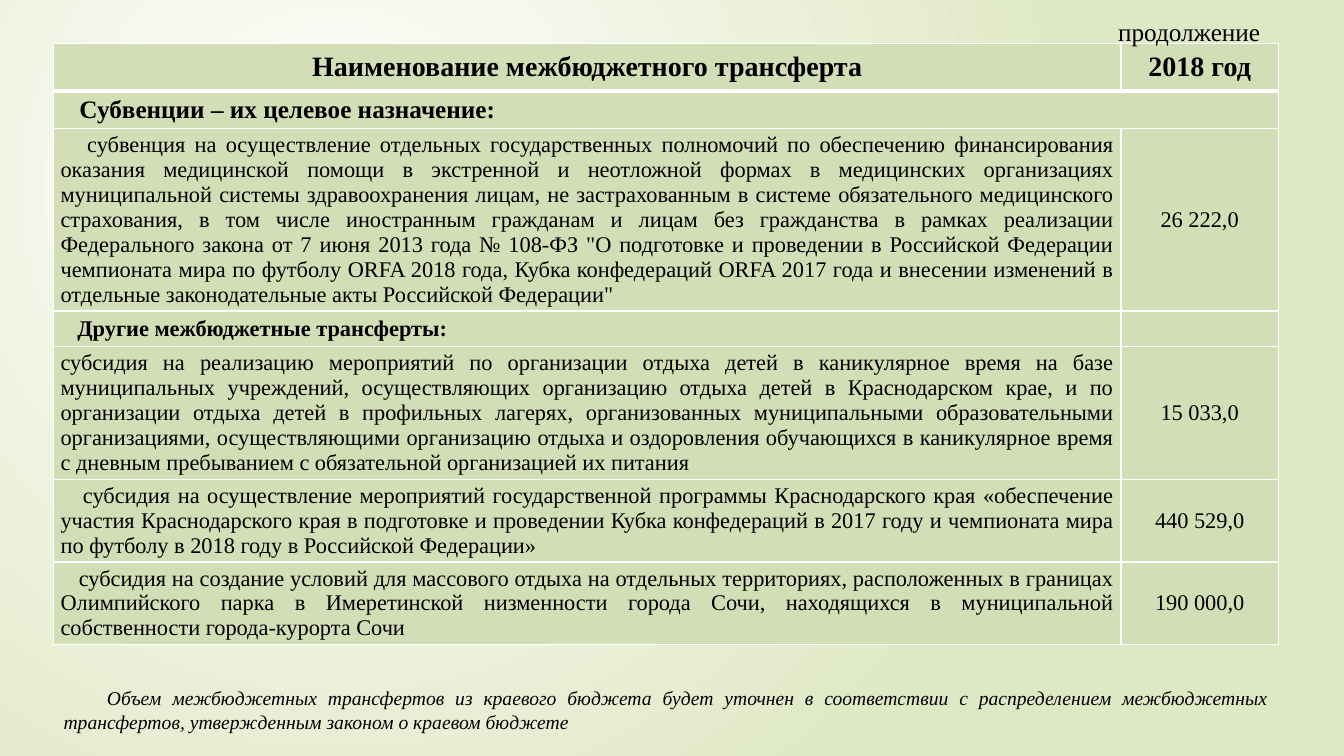
from dataclasses import dataclass

from lxml.etree import SubElement
from pptx import Presentation
from pptx.dml.color import RGBColor
from pptx.enum.text import MSO_ANCHOR, PP_ALIGN
from pptx.oxml import parse_xml
from pptx.oxml.ns import nsdecls, qn
from pptx.util import Pt


@dataclass(frozen=True)
class Theme:
    font: str = "Times New Roman"
    text: str = "000000"
    cell: str = "D4DEB6"
    border: str = "FFFFFF"
    glow: str = "FFFFFF"
    background: str = "DFE8C4"
    header_size: int = 20
    section_size: int = 18
    body_size: int = 16
    note_size: int = 14


THEME = Theme()
COLUMN_WIDTHS = (762.5, 112.3)
HEADER = ("Наименование межбюджетного трансферта", "2018 год")

# Name, value, row height, first-line indent, size, bold
ROWS = (
    ("Субвенции – их целевое назначение:", None, 27, 13.5, THEME.section_size, True),
    ("субвенция на осуществление отдельных государственных полномочий по обеспечению "
     "финансирования оказания медицинской помощи в экстренной и неотложной формах в "
     "медицинских организациях муниципальной системы здравоохранения лицам, не "
     "застрахованным в системе обязательного медицинского страхования, в том числе "
     "иностранным гражданам и лицам без гражданства в рамках реализации Федерального "
     "закона от 7 июня 2013 года № 108-ФЗ \"О подготовке и проведении в Российской "
     "Федерации чемпионата мира по футболу ORFA 2018 года, Кубка конфедераций ORFA 2017 "
     "года и внесении изменений в отдельные законодательные акты Российской Федерации\"",
     "26 222,0", 130, 19, THEME.body_size, False),
    ("Другие межбюджетные трансферты:", "", 24.5, 12, THEME.body_size, True),
    ("субсидия на реализацию мероприятий по организации отдыха детей в каникулярное "
     "время на базе муниципальных учреждений, осуществляющих организацию отдыха детей в "
     "Краснодарском крае, и по организации отдыха детей в профильных лагерях, "
     "организованных муниципальными образовательными организациями, осуществляющими "
     "организацию отдыха и оздоровления обучающихся в каникулярное время с дневным "
     "пребыванием с обязательной организацией их питания",
     "15 033,0", 94, 0, THEME.body_size, False),
    ("субсидия на осуществление мероприятий государственной программы Краснодарского "
     "края «обеспечение участия Краснодарского края в подготовке и проведении Кубка "
     "конфедераций в 2017 году и чемпионата мира по футболу в 2018 году в Российской "
     "Федерации»", "440 529,0", 58.5, 16, THEME.body_size, False),
    ("субсидия на создание условий для массового отдыха на отдельных территориях, "
     "расположенных в границах Олимпийского парка в Имеретинской низменности города "
     "Сочи, находящихся в муниципальной собственности города-курорта Сочи",
     "190 000,0", 58.5, 13, THEME.body_size, False),
)
NOTE = ("Объем межбюджетных трансфертов из краевого бюджета будет уточнен в соответствии "
        "с распределением межбюджетных трансфертов, утвержденным законом о краевом бюджете")


def write_text(frame, text, size, align, bold=False, italic=False, indent=0):
    paragraph = frame.paragraphs[0]
    paragraph.alignment = align
    if indent:
        paragraph._p.get_or_add_pPr().set("indent", str(Pt(indent)))
    if not text:
        # An empty cell keeps the type size, so its row stays low
        SubElement(paragraph._p, qn("a:endParaRPr"), sz=str(size * 100))
        return
    run = paragraph.add_run()
    run.text = text
    run.font.name = THEME.font
    run.font.size = Pt(size)
    run.font.bold = bold
    run.font.italic = italic
    run.font.color.rgb = RGBColor.from_string(THEME.text)


def paint_background(slide):
    fill = slide.background.fill
    fill.gradient()
    for stop, color in zip(fill.gradient_stops, (THEME.glow, THEME.background)):
        stop.color.rgb = RGBColor.from_string(color)
    gradient = slide._element.find(".//" + qn("a:gradFill"))
    gradient.replace(gradient.find(qn("a:lin")), parse_xml(
        f'<a:path {nsdecls("a")} path="circle">'
        '<a:fillToRect l="50000" t="50000" r="100000" b="100000"/></a:path>'))


def format_cell(cell, top=1, bottom=1):
    cell.vertical_anchor = MSO_ANCHOR.MIDDLE
    cell.margin_left = cell.margin_right = Pt(5)
    cell.margin_top = cell.margin_bottom = Pt(2.9)
    cell.fill.solid()
    cell.fill.fore_color.rgb = RGBColor.from_string(THEME.cell)
    properties = cell._tc.get_or_add_tcPr()
    sides = (("L", 1), ("R", 1), ("T", top), ("B", bottom))
    for position, (side, width) in enumerate(sides):
        properties.insert(position, parse_xml(
            f'<a:ln{side} {nsdecls("a")} w="{Pt(width)}"><a:solidFill>'
            f'<a:srgbClr val="{THEME.border}"/></a:solidFill></a:ln{side}>'))


def add_transfer_table(slide):
    heights = [34] + [row[2] for row in ROWS]
    table = slide.shapes.add_table(
        len(heights), len(COLUMN_WIDTHS), Pt(38.3), Pt(31),
        Pt(sum(COLUMN_WIDTHS)), Pt(sum(heights))).table
    for column, width in zip(table.columns, COLUMN_WIDTHS):
        column.width = Pt(width)
    for index, height in enumerate(heights):
        table.rows[index].height = Pt(height)
        for cell in table.rows[index].cells:
            format_cell(cell, top=3 if index == 1 else 1, bottom=3 if index == 0 else 1)

    # Header
    for column, title in enumerate(HEADER):
        write_text(table.cell(0, column).text_frame, title, THEME.header_size,
                   PP_ALIGN.CENTER, bold=True)

    # Sections and transfers
    for index, (name, value, _, indent, size, bold) in enumerate(ROWS, start=1):
        name_cell, value_cell = table.cell(index, 0), table.cell(index, 1)
        write_text(name_cell.text_frame, name, size, PP_ALIGN.JUSTIFY,
                   bold=bold, indent=indent)
        if value is None:
            name_cell.merge(value_cell)
        else:
            write_text(value_cell.text_frame, value, size, PP_ALIGN.CENTER)


def add_label(slide, text, left, top, width, height, **text_format):
    frame = slide.shapes.add_textbox(Pt(left), Pt(top), Pt(width), Pt(height)).text_frame
    frame.word_wrap = True
    write_text(frame, text, **text_format)


def main():
    presentation = Presentation()
    presentation.slide_width, presentation.slide_height = Pt(960), Pt(540)
    slide = presentation.slides.add_slide(presentation.slide_layouts[6])
    paint_background(slide)
    add_transfer_table(slide)
    # Continuation mark and footnote
    add_label(slide, "продолжение", 759.6, 8, 147.6, 29,
              size=THEME.section_size, align=PP_ALIGN.RIGHT)
    add_label(slide, NOTE, 38.3, 486.7, 874.8, 41, size=THEME.note_size,
              align=PP_ALIGN.JUSTIFY, italic=True, indent=31)
    presentation.save("out.pptx")


if __name__ == "__main__":
    main()
